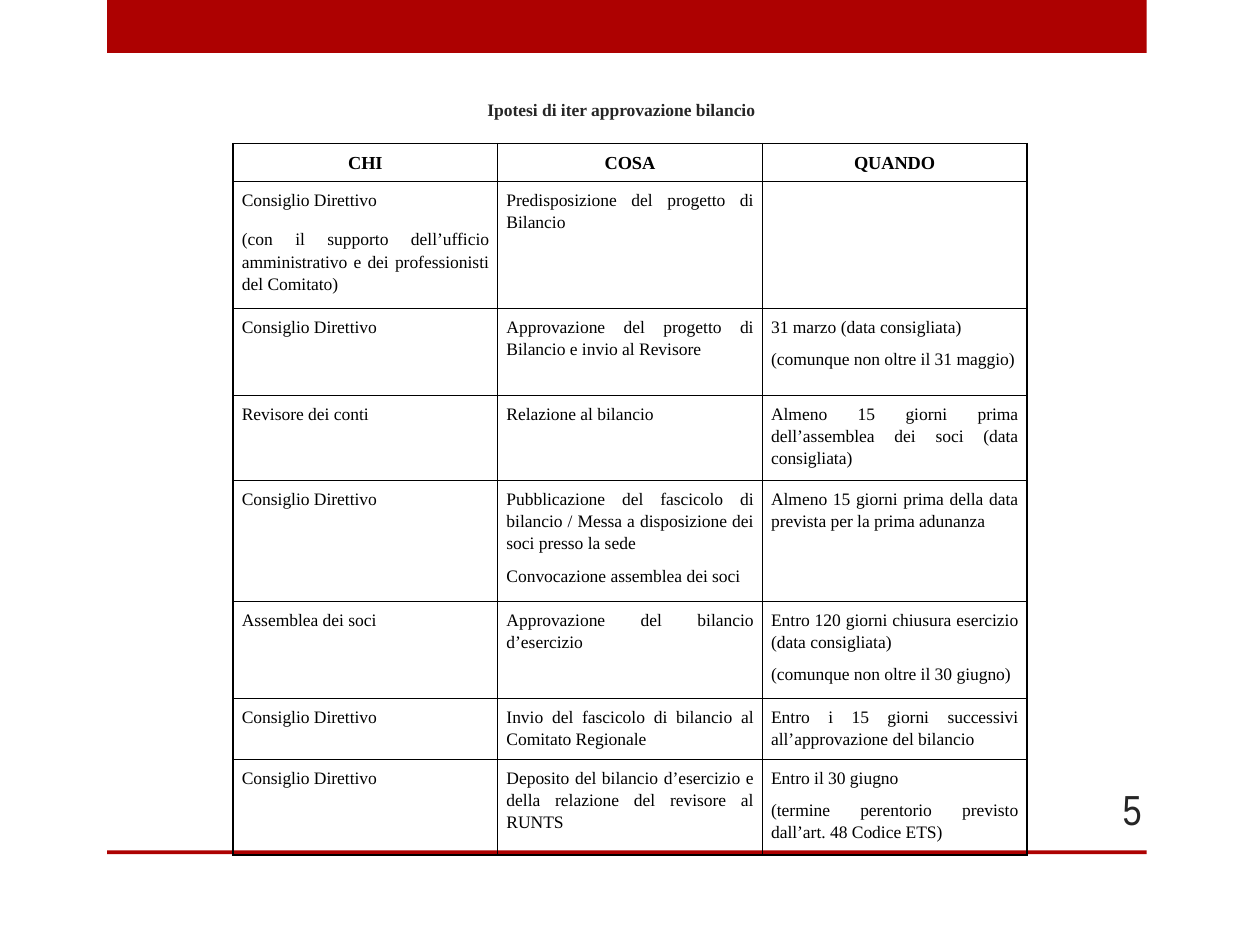
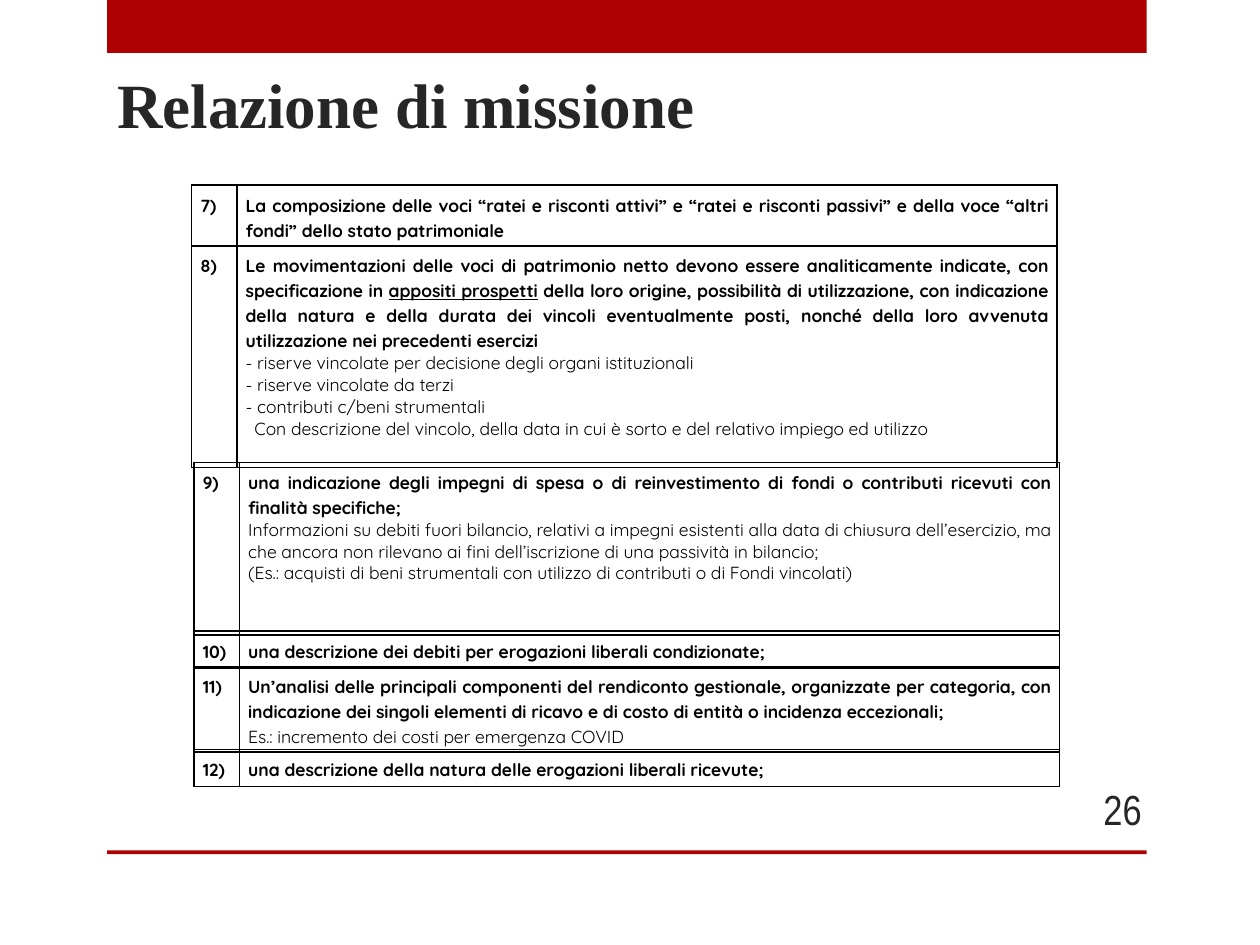
from lxml import etree
from pptx import Presentation
from pptx.dml.color import RGBColor
from pptx.enum.shapes import MSO_SHAPE
from pptx.enum.text import MSO_ANCHOR, PP_ALIGN
from pptx.oxml import parse_xml
from pptx.oxml.ns import nsdecls
from pptx.util import Inches, Pt

RED, DARK, BLACK = "AD0101", "262626", "000000"
SERIF, SANS, NARROW = "Times New Roman", "Quicksand", "Arial Narrow"
BANDS = [(0, 0.42), (6.75, 0.03)]

STEPS_TITLE = "Ipotesi di iter approvazione bilancio"
STEPS_HEAD = ["CHI", "COSA", "QUANDO"]
STEPS = [
    (["Consiglio Direttivo",
      "(con il supporto dell’ufficio amministrativo e dei professionisti del Comitato)"],
     ["Predisposizione del progetto di Bilancio"],
     []),
    (["Consiglio Direttivo"],
     ["Approvazione del progetto di Bilancio e invio al Revisore"],
     ["31 marzo (data consigliata)", "(comunque non oltre il 31 maggio)"]),
    (["Revisore dei conti"],
     ["Relazione al bilancio"],
     ["Almeno 15 giorni prima dell’assemblea dei soci (data consigliata)"]),
    (["Consiglio Direttivo"],
     ["Pubblicazione del fascicolo di bilancio / Messa a disposizione dei soci presso la sede",
      "Convocazione assemblea dei soci"],
     ["Almeno 15 giorni prima della data prevista per la prima adunanza"]),
    (["Assemblea dei soci"],
     ["Approvazione del bilancio d’esercizio"],
     ["Entro 120 giorni chiusura esercizio (data consigliata)",
      "(comunque non oltre il 30 giugno)"]),
    (["Consiglio Direttivo"],
     ["Invio del fascicolo di bilancio al Comitato Regionale"],
     ["Entro i 15 giorni successivi all’approvazione del bilancio"]),
    (["Consiglio Direttivo"],
     ["Deposito del bilancio d’esercizio e della relazione del revisore al RUNTS"],
     ["Entro il 30 giugno", "(termine perentorio previsto dall’art. 48 Codice ETS)"]),
]
STEPS_HEIGHTS = [0.29, 0.95, 0.69, 0.64, 0.96, 0.77, 0.45, 0.71]

REPORT_TITLE = "Relazione di missione"
REPORT = [
    dict(number="7)", left=1.52, top=1.47, height=0.48,
         heading="La composizione delle voci “ratei e risconti attivi” e “ratei e risconti "
                 "passivi” e della voce “altri fondi” dello stato patrimoniale"),
    dict(number="8)", left=1.52, top=1.95, height=1.76,
         heading="Le movimentazioni delle voci di patrimonio netto devono essere analiticamente "
                 "indicate, con specificazione in |appositi prospetti| della loro origine, "
                 "possibilità di utilizzazione, con indicazione della natura e della durata dei "
                 "vincoli eventualmente posti, nonché della loro avvenuta utilizzazione nei "
                 "precedenti esercizi",
         details=["- riserve vincolate per decisione degli organi istituzionali",
                  "- riserve vincolate da terzi",
                  "- contributi c/beni strumentali"],
         indented="Con descrizione del vincolo, della data in cui è sorto e del relativo "
                  "impiego ed utilizzo"),
    dict(number="9)", left=1.54, top=3.67, height=1.37,
         heading="una indicazione degli impegni di spesa o di reinvestimento di fondi o "
                 "contributi ricevuti con finalità specifiche;",
         details=["Informazioni su debiti fuori bilancio, relativi a impegni esistenti alla data "
                  "di chiusura dell’esercizio, ma che ancora non rilevano ai fini "
                  "dell’iscrizione di una passività in bilancio;",
                  "(Es.: acquisti di beni strumentali con utilizzo di contributi o di Fondi "
                  "vincolati)"]),
    dict(number="10)", left=1.54, top=5.01, height=0.29,
         heading="una descrizione dei debiti per erogazioni liberali condizionate;"),
    dict(number="11)", left=1.54, top=5.29, height=0.68,
         heading="Un’analisi delle principali componenti del rendiconto gestionale, organizzate "
                 "per categoria, con indicazione dei singoli elementi di ricavo e di costo di "
                 "entità o incidenza eccezionali;",
         details=["Es.: incremento dei costi per emergenza COVID"], spacing=1.15),
    dict(number="12)", left=1.54, top=5.95, height=0.29,
         heading="una descrizione della natura delle erogazioni liberali ricevute;"),
]


def color(value):
    return RGBColor.from_string(value)


def style(p, font, size, fill=BLACK, bold=False, align=PP_ALIGN.JUSTIFY, spacing=1.15):
    p.alignment = align
    p.line_spacing = spacing
    p.font.name, p.font.size, p.font.bold = font, Pt(size), bold
    p.font.color.rgb = color(fill)


def write(tf, text, *args, **kwargs):
    """Add a styled paragraph; text between bars is underlined."""
    p = tf.paragraphs[0] if not tf.text else tf.add_paragraph()
    for i, part in enumerate(text.split("|")):
        r = p.add_run()
        r.text = part
        if i % 2:
            r.font.underline = True
    style(p, *args, **kwargs)
    return p


def add_page(prs, title, box, size, align, anchor, number):
    s = prs.slides.add_slide(prs.slide_layouts[5])
    for top, height in BANDS:
        sp = s.shapes.add_shape(MSO_SHAPE.RECTANGLE, Inches(0.85), Inches(top),
                                Inches(8.25), Inches(height))
        sp.shadow.inherit = False
        sp.fill.solid()
        sp.fill.fore_color.rgb = color(RED)
        sp.line.fill.background()
    sp = s.shapes.title
    sp.left, sp.top, sp.width, sp.height = map(Inches, box)
    sp.text_frame.vertical_anchor = anchor
    write(sp.text_frame, title, SERIF, size, DARK, True, align, 1)
    tf = s.shapes.add_textbox(*map(Inches, (8.33, 6.22, 0.83, 0.4))).text_frame
    tf.word_wrap = True
    tf.vertical_anchor = MSO_ANCHOR.MIDDLE
    write(tf, number, NARROW, 24, DARK, False, PP_ALIGN.RIGHT, 1)
    return s


def frame_cell(cell):
    cell.margin_left = cell.margin_right = Inches(0.07)
    cell.margin_top = cell.margin_bottom = Inches(0.05)
    cell.fill.background()
    tc_pr = cell._tc.get_or_add_tcPr()
    for i, side in enumerate("LRTB"):
        ln = parse_xml(f'<a:ln{side} {nsdecls("a")} w="{Pt(0.96)}"/>')
        fill = etree.SubElement(ln, ln.tag.replace(f"ln{side}", "solidFill"))
        etree.SubElement(fill, ln.tag.replace(f"ln{side}", "srgbClr"), val=BLACK)
        tc_pr.insert(i, ln)


def add_grid(s, left, top, widths, heights):
    table = s.shapes.add_table(len(heights), len(widths), Inches(left), Inches(top),
                               Inches(sum(widths)), Inches(sum(heights))).table
    table.first_row = table.horz_banding = False
    for col, width in zip(table.columns, widths):
        col.width = Inches(width)
    for row, height in zip(table.rows, heights):
        row.height = Inches(height)
    for cell in table.iter_cells():
        frame_cell(cell)
    return table


def add_steps(prs):
    s = add_page(prs, STEPS_TITLE, (0.43, 0.67, 9, 0.4), 10, PP_ALIGN.CENTER,
                 MSO_ANCHOR.MIDDLE, "5")
    table = add_grid(s, 1.85, 1.14, [2.1] * 3, STEPS_HEIGHTS)
    for c, head in enumerate(STEPS_HEAD):
        write(table.cell(0, c).text_frame, head, SERIF, 10.5, bold=True, align=PP_ALIGN.CENTER)
    for r, step in enumerate(STEPS, 1):
        for c, texts in enumerate(step):
            tf = table.cell(r, c).text_frame
            for text in texts:
                write(tf, text, SERIF, 10).space_after = Pt(6 if c else 10)
            if not texts:
                style(tf.paragraphs[0], SERIF, 10)


def add_report(prs):
    s = add_page(prs, REPORT_TITLE, (0.83, 0.42, 7.42, 0.75), 36, PP_ALIGN.LEFT,
                 MSO_ANCHOR.BOTTOM, "26")
    for item in REPORT:
        table = add_grid(s, item["left"], item["top"], [0.36, 6.51], [item["height"]])
        write(table.cell(0, 0).text_frame, item["number"], SANS, 10, bold=True)
        tf = table.cell(0, 1).text_frame
        write(tf, item["heading"], SANS, 10, bold=True)
        look = dict(align=PP_ALIGN.LEFT, spacing=item.get("spacing", 1))
        for text in item.get("details", []):
            write(tf, text, SANS, 10, **look)
        if "indented" in item:
            p = write(tf, item["indented"], SANS, 10, **look)
            p._p.get_or_add_pPr().set("marL", str(Inches(0.07)))


def main():
    prs = Presentation()
    prs.slide_width, prs.slide_height = Inches(10), Inches(7.5)
    add_steps(prs)
    add_report(prs)
    prs.save("out.pptx")


if __name__ == "__main__":
    main()
